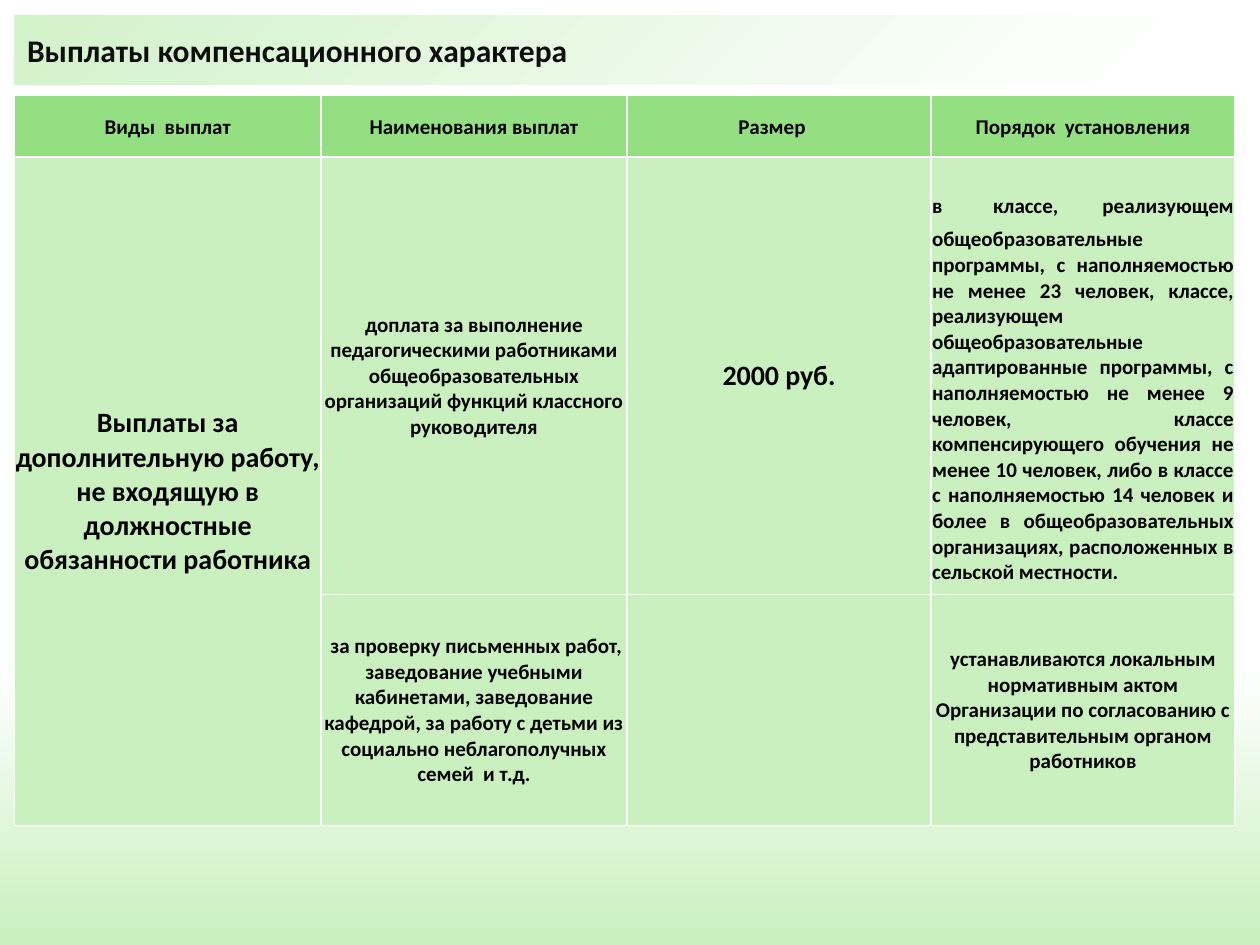
from dataclasses import dataclass

from lxml.etree import SubElement
from pptx import Presentation
from pptx.dml.color import RGBColor
from pptx.enum.shapes import MSO_SHAPE
from pptx.enum.text import MSO_ANCHOR, PP_ALIGN
from pptx.oxml import parse_xml
from pptx.oxml.ns import nsdecls, qn
from pptx.util import Pt


@dataclass(frozen=True)
class Theme:
    """Colours, font and type sizes of the deck."""
    font: str = "Calibri"
    title_color: str = "0D0D0D"
    text_color: str = "000000"
    header_fill: str = "93DF81"
    body_fill: str = "C9F0BE"
    banner_fill: str = "D2F2CA"
    white: str = "FFFFFF"
    title: int = 18
    large: int = 16
    small: int = 12
    gap: int = 28


class SlideBuilder:
    """Draws styled elements on the current slide."""

    def __init__(self, deck, theme):
        self.theme = theme
        self.page = deck.slides.add_slide(deck.slide_layouts[6])

    def style_span(self, span, size, color, bold=True):
        """Apply the theme font to one run."""
        span.font.name = self.theme.font
        span.font.size = Pt(size)
        span.font.bold = bold
        span.font.color.rgb = RGBColor.from_string(color)

    def gradient(self, owner, fill, stops, direction):
        """Fill with colour stops and a direction element."""
        fill.gradient()
        gradient = owner.element.find(".//" + qn("a:gradFill"))
        for child in list(gradient):
            gradient.remove(child)
        stop_list = SubElement(gradient, qn("a:gsLst"))
        for percent, color in stops:
            stop = SubElement(stop_list, qn("a:gs"), pos=str(percent * 1000))
            SubElement(stop, qn("a:srgbClr"), val=color)
        gradient.append(parse_xml(direction))

    def background(self):
        """Fade the page from green at the bottom to white."""
        theme = self.theme
        stops = [(0, theme.body_fill), (30, theme.white), (70, theme.white)]
        direction = f'<a:lin {nsdecls("a")} ang="16200000" scaled="0"/>'
        self.gradient(self.page, self.page.background.fill, stops, direction)

    def banner(self, text, left, top, width, height):
        """Add the title strip with a gradient from its top left corner."""
        theme = self.theme
        box = self.page.shapes.add_shape(
            MSO_SHAPE.RECTANGLE, Pt(left), Pt(top), Pt(width), Pt(height))
        box.shadow.inherit = False
        box.line.fill.background()
        stops = [(0, theme.banner_fill), (93, theme.white), (94, theme.white)]
        direction = (f'<a:path {nsdecls("a")} path="circle">'
                     '<a:fillToRect r="100000" b="100000"/></a:path>')
        self.gradient(box, box.fill, stops, direction)
        box.text_frame.text = text
        box.text_frame.vertical_anchor = MSO_ANCHOR.MIDDLE
        para = box.text_frame.paragraphs[0]
        para.alignment = PP_ALIGN.LEFT
        self.style_span(para.runs[0], theme.title, theme.title_color)

    def borders(self, cell):
        """Draw thin white lines on all sides of a cell."""
        properties = cell._tc.get_or_add_tcPr()
        for index, side in enumerate(("lnL", "lnR", "lnT", "lnB")):
            properties.insert(index, parse_xml(
                f'<a:{side} {nsdecls("a")} w="{Pt(1)}"><a:solidFill>'
                f'<a:srgbClr val="{self.theme.white}"/></a:solidFill></a:{side}>'))

    def cell(self, cell, spans, fill, align):
        """Set the fill, borders and (text, size, bold) spans of a cell."""
        cell.fill.solid()
        cell.fill.fore_color.rgb = RGBColor.from_string(fill)
        self.borders(cell)
        cell.vertical_anchor = MSO_ANCHOR.MIDDLE
        cell.margin_left = cell.margin_right = cell.margin_top = Pt(0.6)
        cell.margin_bottom = 0
        para = cell.text_frame.paragraphs[0]
        para.alignment = align
        for text, size, bold in spans:
            span = para.add_run()
            span.text = text
            self.style_span(span, size, self.theme.text_color, bold)

    def table(self, rows, left, top, widths, heights):
        """Add a table with a header row and a merged first column."""
        theme = self.theme
        frame = self.page.shapes.add_table(
            len(heights), len(widths), Pt(left), Pt(top),
            Pt(sum(widths)), Pt(sum(heights)))
        table = frame.table
        for column, width in zip(table.columns, widths):
            column.width = Pt(width)
        for row, height in zip(table.rows, heights):
            row.height = Pt(height)
        for row_index, row in enumerate(rows):
            fill = theme.body_fill if row_index else theme.header_fill
            for column_index, content in enumerate(row):
                single = isinstance(content, tuple)
                spans = [content + (True,)] if single else content
                align = PP_ALIGN.JUSTIFY if len(spans) > 1 else PP_ALIGN.CENTER
                self.cell(table.cell(row_index, column_index), spans, fill, align)
        table.cell(1, 0).merge(table.cell(len(heights) - 1, 0))


def main():
    """Build the slide on compensation payments."""
    deck = Presentation()
    deck.slide_width, deck.slide_height = Pt(720), Pt(540)
    theme = Theme()
    builder = SlideBuilder(deck, theme)
    builder.background()
    builder.banner("Выплаты компенсационного характера", 8.4, 8.6, 692, 39.6)
    headings = ["Виды  выплат", "Наименования выплат", "Размер   ",
                "Порядок  установления"]
    class_rules = (
        "классе, реализующем общеобразовательные программы, с наполняемостью "
        "не менее 23 человек, классе, реализующем общеобразовательные "
        "адаптированные программы, с наполняемостью не менее 9 человек, классе "
        "компенсирующего обучения не менее 10 человек, либо в классе с "
        "наполняемостью 14 человек и более в общеобразовательных организациях, "
        "расположенных в сельской местности.")
    rows = [
        [(heading, theme.small) for heading in headings],
        [("Выплаты за дополнительную работу, не входящую в должностные "
          "обязанности работника", theme.large),
         ("доплата за выполнение педагогическими работниками "
          "общеобразовательных организаций функций классного руководителя",
          theme.small),
         ("2000 руб.", theme.large),
         [("в", theme.small, True), (" ", theme.gap, False),
          (class_rules, theme.small, True)]],
        [[],
         (" за проверку письменных работ, заведование учебными кабинетами, "
          "заведование кафедрой, за работу с детьми из социально "
          "неблагополучных семей  и т.д.", theme.small),
         [],
         ("устанавливаются локальным нормативным актом Организации по "
          "согласованию с представительным органом работников", theme.small)],
    ]
    builder.table(rows, 8.4, 54.7, [175, 175, 173.7, 173.7], [35, 250, 132])
    deck.save("out.pptx")


if __name__ == "__main__":
    main()
